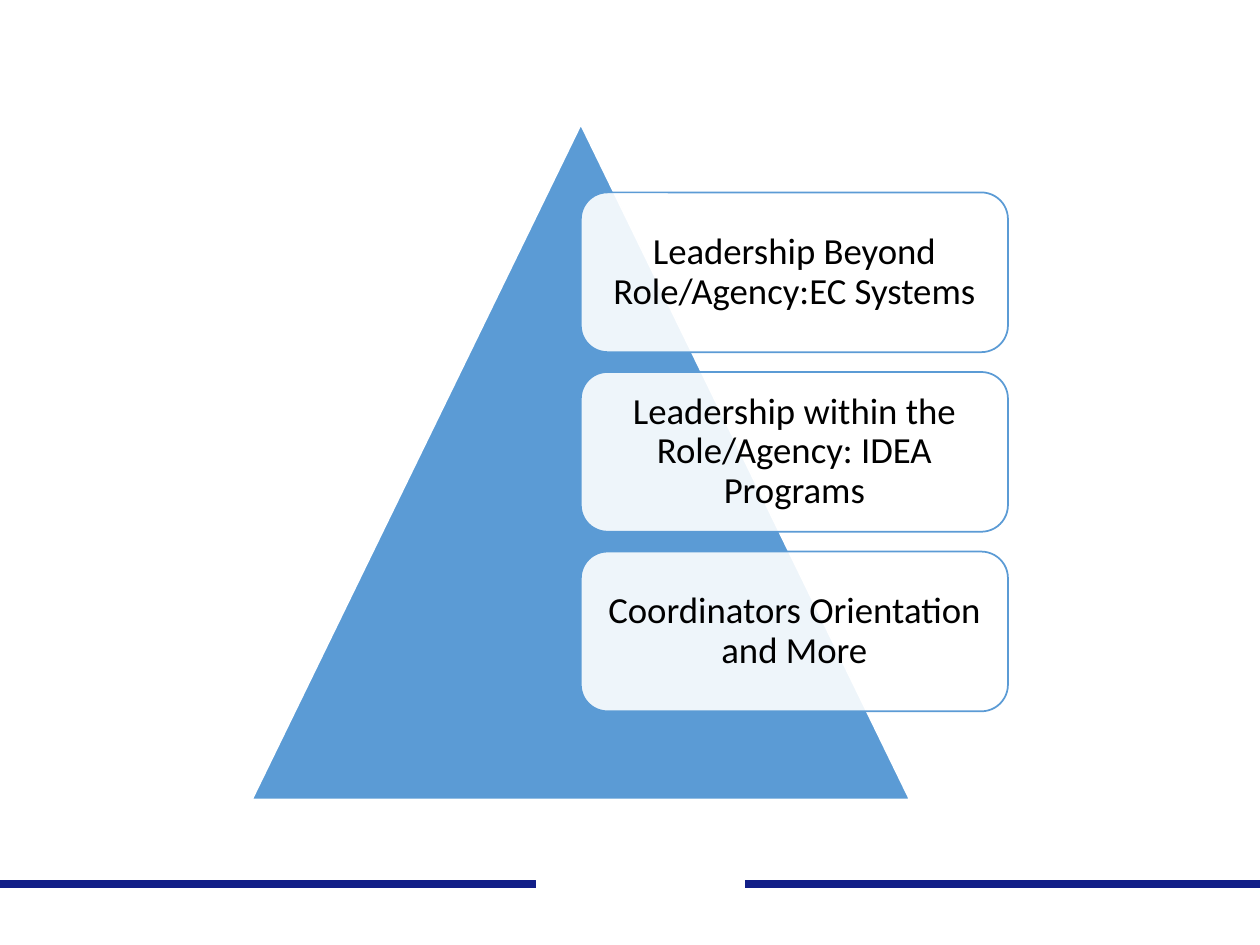
from dataclasses import dataclass

from lxml.etree import SubElement
from pptx import Presentation
from pptx.dml.color import RGBColor as RGB
from pptx.enum.shapes import MSO_CONNECTOR as CONN, MSO_SHAPE as SHAPE
from pptx.enum.text import MSO_ANCHOR as ANCHOR, PP_ALIGN as ALIGN
from pptx.oxml.ns import qn
from pptx.util import Cm, Pt


@dataclass(frozen=True)
class Theme:
    navy: RGB = RGB(0x12, 0x1F, 0x88)
    blue: RGB = RGB(0x5B, 0x9B, 0xD5)
    white: RGB = RGB(0xFF, 0xFF, 0xFF)
    black: RGB = RGB(0, 0, 0)
    font: str = "Calibri"
    size: Pt = Pt(21)
    outline: Pt = Pt(1)
    rule: Pt = Pt(4.5)


def add_box(shapes, kind, box, text="", *, fill, line, alpha=None):
    sp = shapes.add_shape(kind, *[Cm(v) for v in box])
    sp.shadow.inherit = False
    sp.fill.solid()
    sp.fill.fore_color.rgb = fill
    if alpha:
        color = sp.fill._xPr.find(qn("a:solidFill"))[0]
        SubElement(color, qn("a:alpha"), val=str(alpha * 1000))
    sp.line.color.rgb = line
    sp.line.width = theme.outline
    if text:
        tf = sp.text_frame
        tf.word_wrap = True
        tf.vertical_anchor = ANCHOR.MIDDLE
        tf.margin_left = tf.margin_right = Cm(0.23)
        tf.margin_top = tf.margin_bottom = Cm(0.23)
        p = tf.paragraphs[0]
        p.alignment = ALIGN.CENTER
        p.line_spacing = 0.9
        r = p.add_run()
        r.text = text
        r.font.name = theme.font
        r.font.size = theme.size
        r.font.color.rgb = theme.black
    return sp


theme = Theme()
prs = Presentation()
prs.slide_width, prs.slide_height = Cm(25.4), Cm(19.05)
s = prs.slides.add_slide(prs.slide_layouts[6])

rule_y = Cm(17.83)
for x1, x2, color in [(0, 25.4, theme.navy), (10.8, 15.01, theme.white)]:
    rule = s.shapes.add_connector(CONN.STRAIGHT, Cm(x1), rule_y, Cm(x2), rule_y)
    rule.line.color.rgb = color
    rule.line.width = theme.rule
    SubElement(rule._element.spPr, qn("a:effectLst"))

add_box(s.shapes, SHAPE.ISOSCELES_TRIANGLE, (5.08, 2.51, 13.26, 13.61),
        fill=theme.blue, line=theme.white)

levels = [
    "Leadership Beyond Role/Agency:EC Systems",
    "Leadership within the Role/Agency: IDEA Programs",
    "Coordinators Orientation and More",
]
top, pitch = 3.88, 3.62
for i, level in enumerate(levels):
    add_box(s.shapes, SHAPE.ROUNDED_RECTANGLE, (11.71, top + i * pitch, 8.61, 3.22),
            level, fill=theme.white, line=theme.blue, alpha=90)

prs.save("out.pptx")
